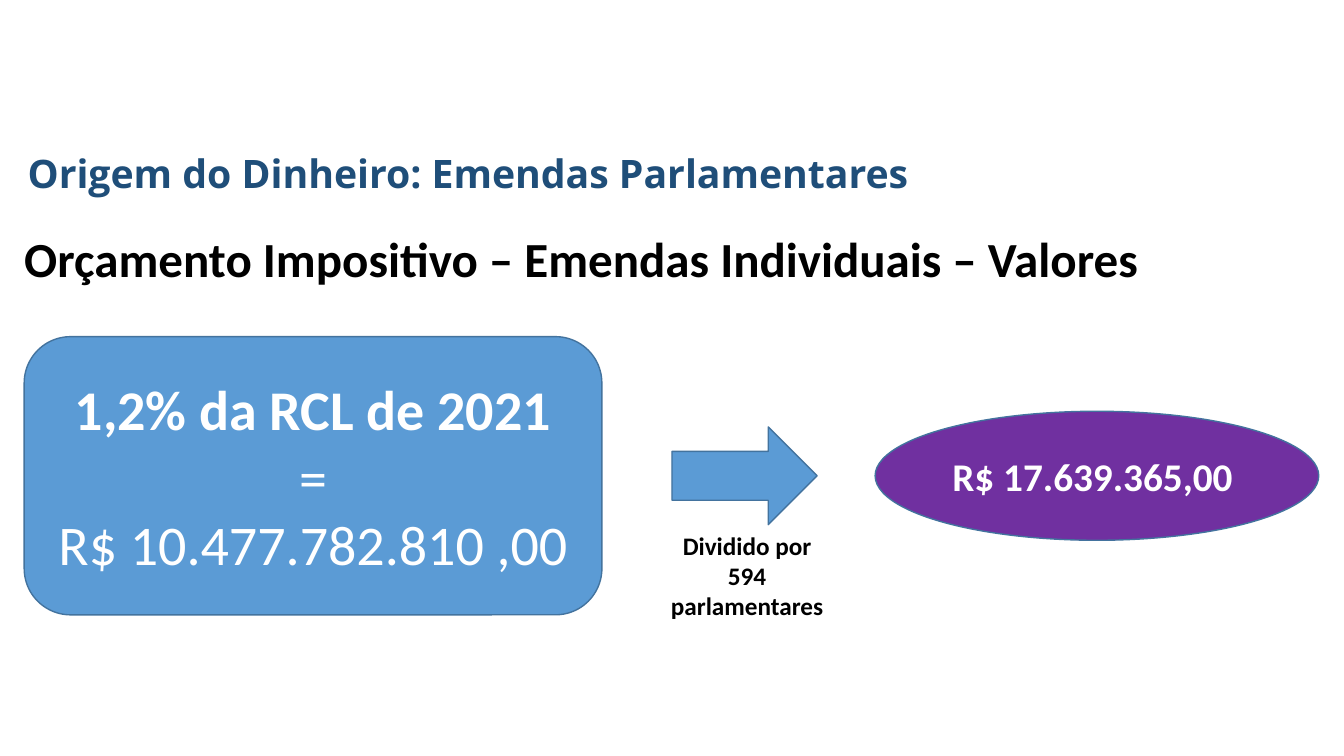
"""Build the slide on the value of individual parliamentary amendments."""
from pptx import Presentation
from pptx import util as u
from pptx.dml.color import RGBColor
from pptx.enum import shapes, text

TITLE = "Origem do Dinheiro: Emendas Parlamentares"
SUBTITLE = "Orçamento Impositivo – Emendas Individuais – Valores"
REVENUE = [("1,2% da RCL de 2021", True), ("=", False), ("R$ 10.477.782.810 ,00", False)]
DIVISOR = "Dividido por 594 parlamentares"
SHARE = "R$ 17.639.365,00 "

WIDTH, HEIGHT = 13.33, 7.5
LEFT = 0.24
FLOW_AXIS = 4.72
BLUE = RGBColor(0x5B, 0x9B, 0xD5)
OUTLINE = RGBColor(0x43, 0x73, 0x9E)
PURPLE = RGBColor(0x70, 0x30, 0xA0)
NAVY = RGBColor(0x1F, 0x4E, 0x79)
BLACK = RGBColor(0, 0, 0)
WHITE = RGBColor(255, 255, 255)


def write(shape, lines, size, color, font="Calibri", align=text.PP_ALIGN.CENTER,
          anchor=text.MSO_ANCHOR.MIDDLE, spacing=1.0, margins=(0.1, 0.05)):
    """Fill a shape with (wording, bold) lines in one format."""
    frame = shape.text_frame
    frame.word_wrap = True
    frame.auto_size = text.MSO_AUTO_SIZE.NONE
    frame.vertical_anchor = anchor
    frame.margin_left = frame.margin_right = u.Inches(margins[0])
    frame.margin_top = frame.margin_bottom = u.Inches(margins[1])
    for index, (wording, bold) in enumerate(lines):
        paragraph = frame.add_paragraph() if index else frame.paragraphs[0]
        paragraph.alignment = align
        paragraph.line_spacing = spacing
        run = paragraph.add_run()
        run.text = wording
        run.font.name, run.font.size, run.font.bold = font, u.Pt(size), bold
        run.font.color.rgb = color


def add_block(slide, kind, left, width, height, fill):
    """Add an outlined shape centred on the flow axis."""
    top = FLOW_AXIS - height / 2
    shape = slide.shapes.add_shape(kind, *map(u.Inches, (left, top, width, height)))
    shape.shadow.inherit = False
    shape.fill.solid()
    shape.fill.fore_color.rgb = fill
    shape.line.color.rgb = OUTLINE
    shape.line.width = u.Pt(1)
    return shape


def main():
    """Place the headings, then the flow from left to right."""
    presentation = Presentation()
    presentation.slide_width, presentation.slide_height = u.Inches(WIDTH), u.Inches(HEIGHT)
    slide = presentation.slides.add_slide(presentation.slide_layouts[5])

    title = slide.shapes.title
    title.left, title.top, title.width, title.height = map(u.Inches, (0, 1.34, 9.28, 0.63))
    write(title, [(TITLE, True)], 28, NAVY, font="Open Sans",
          anchor=text.MSO_ANCHOR.TOP, spacing=1.2)

    subtitle = slide.shapes.add_textbox(*map(u.Inches, (LEFT, 2.27, 12.51, 0.59)))
    write(subtitle, [(SUBTITLE, True)], 35, BLACK, align=text.PP_ALIGN.LEFT,
          anchor=text.MSO_ANCHOR.TOP, margins=(0, 0))

    kinds = shapes.MSO_SHAPE
    revenue = add_block(slide, kinds.ROUNDED_RECTANGLE, LEFT, 5.73, 2.76, BLUE)
    write(revenue, REVENUE, 40, WHITE)

    arrow = add_block(slide, kinds.DOWN_ARROW, 6.9, 0.97, 1.44, BLUE)
    arrow.rotation = 270

    divisor = slide.shapes.add_textbox(*map(u.Inches, (6.55, 5.21, 1.72, 1.01)))
    write(divisor, [(DIVISOR, True)], 18, BLACK, anchor=text.MSO_ANCHOR.TOP,
          margins=(0.07, 0.05))

    share = add_block(slide, kinds.OVAL, 8.68, 4.4, 1.28, PURPLE)
    write(share, [(SHARE, True)], 28, WHITE)

    presentation.save("out.pptx")


if __name__ == "__main__":
    main()
